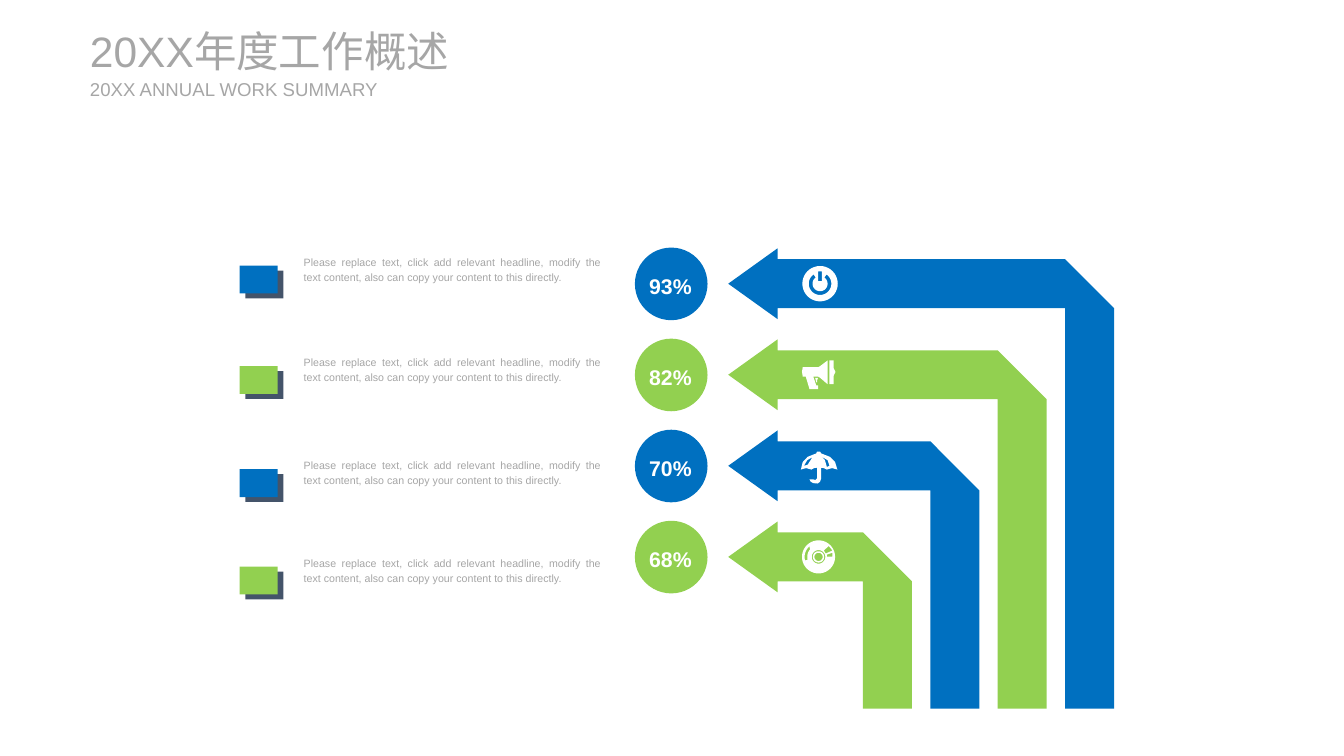
import math
import pptx
import pptx.util
import pptx.dml.color
import pptx.enum.shapes
import pptx.enum.text

Cm = pptx.util.Cm
RGBColor = pptx.dml.color.RGBColor
Shape = pptx.enum.shapes.MSO_SHAPE
Align = pptx.enum.text.PP_ALIGN
Anchor = pptx.enum.text.MSO_ANCHOR

BLUE = RGBColor(0x00, 0x70, 0xC0)
GREEN = RGBColor(0x92, 0xD0, 0x50)
NAVY = RGBColor(0x44, 0x54, 0x6A)
GREY = RGBColor(0xA6, 0xA6, 0xA6)
WHITE = RGBColor(0xFF, 0xFF, 0xFF)

BLURB = ("Please replace text, click add relevant headline, modify the text "
         "content, also can copy your content to this directly.")
ROW_MID, ROW_STEP = 7.54, 2.42
ICON_MID = 21.79


def arc(radius, start, end, shift=0):
    steps = 40
    angles = [math.radians(start + (end - start) * i / steps) for i in range(steps + 1)]
    return [(shift + radius * math.cos(a), radius * math.sin(a)) for a in angles]


def move(paths, dx, dy):
    return [[(x + dx, y + dy) for x, y in path] for path in paths]


POWER = [
    arc(0.47, 0, 360),
    [(-0.05, -0.33), (0.05, -0.33), (0.05, -0.07), (-0.05, -0.07)],
    arc(0.3, -55, 235) + arc(0.2, 235, -55),
]
HORN = [
    [(-0.46, -0.2), (-0.05, -0.2), (0, -0.23), (0.2, -0.38), (0.2, 0.25),
     (0, 0.08), (-0.05, 0.05), (-0.18, 0.05), (-0.1, 0.28), (-0.05, 0.28),
     (-0.05, 0.38), (-0.28, 0.38), (-0.38, 0.05), (-0.46, 0.05), (-0.48, -0.08)],
    [(0.25, -0.38), (0.36, -0.38), (0.36, -0.18), (0.41, -0.08),
     (0.36, 0.03), (0.36, 0.25), (0.25, 0.25)],
    [(-0.05, 0.08), (-0.13, 0.08), (-0.1, 0.2), (-0.08, 0.2), (-0.08, 0.15)],
]
BROLLY = [
    [(-0.51, 0.1), (-0.46, -0.1), (-0.33, -0.24), (-0.1, -0.33), (-0.08, -0.38),
     (0, -0.38), (0.03, -0.33), (0.26, -0.24), (0.4, -0.1), (0.46, 0.1),
     (0.32, 0.06), (0.18, 0.1), (0.1, 0.06), (0.03, 0.05), (0.03, 0.33),
     (0, 0.42), (-0.06, 0.47), (-0.18, 0.46), (-0.25, 0.42), (-0.28, 0.36),
     (-0.18, 0.36), (-0.13, 0.38), (-0.08, 0.33), (-0.08, 0.05),
     (-0.16, 0.06), (-0.23, 0.1), (-0.37, 0.06)],
    [(0.18, 0.03), (0.25, 0), (0.2, -0.15), (0.03, -0.25), (0.13, -0.15)],
    [(-0.43, 0), (-0.33, -0.03), (-0.2, -0.23), (-0.34, -0.15)],
]
DISC = move(
    [arc(radius, 0, 360) for radius in (0.44, 0.18, 0.15, 0.11)]
    + [arc(0.37, 165, 230) + arc(0.3, 220, 165),
       [(0.14, -0.17), (0.19, -0.09), (0.37, -0.17), (0.27, -0.29)],
       [(0.37, -0.11), (0.22, -0.06), (0.22, -0.01), (0.37, -0.01)]],
    -0.04, 0)

ROWS = [
    ("93%", BLUE, POWER, 6.6),
    ("82%", GREEN, HORN, 9.27),
    ("70%", BLUE, BROLLY, 12.01),
    ("68%", GREEN, DISC, 14.6),
]


def paint(shape, color):
    shape.shadow.inherit = False
    shape.fill.solid()
    shape.fill.fore_color.rgb = color
    shape.line.fill.background()


def add_form(slide, kind, box, color):
    paint(slide.shapes.add_shape(kind, *map(Cm, box)), color)


def add_free(slide, paths, color):
    spots = [[(Cm(x), Cm(y)) for x, y in path] for path in paths]
    pen = slide.shapes.build_freeform(*spots[0][0])
    pen.add_line_segments(spots[0][1:])
    for path in spots[1:]:
        pen.move_to(*path[0])
        pen.add_line_segments(path[1:])
    paint(pen.convert_to_shape(), color)


def write(frame, text, size, color, bold=False):
    frame.text = text
    para = frame.paragraphs[0]
    font = para.runs[0].font
    font.name = "Arial"
    font.size = pptx.util.Pt(size)
    font.bold = bold
    font.color.rgb = color
    return para


def add_text(slide, box, text, size, color, bold=False, wrap=True):
    frame = slide.shapes.add_textbox(*map(Cm, box)).text_frame
    frame.word_wrap = wrap
    para = write(frame, text, size, color, bold)
    para.alignment = Align.JUSTIFY
    para.line_spacing = 1.2


def set_head(holder, box, text, size):
    holder.left, holder.top, holder.width, holder.height = map(Cm, box)
    frame = holder.text_frame
    frame.auto_size = pptx.enum.text.MSO_AUTO_SIZE.NONE
    frame.vertical_anchor = Anchor.MIDDLE
    frame.margin_left = frame.margin_right = 0
    frame.margin_top = frame.margin_bottom = 0
    para = write(frame, text, size, GREY)
    para.alignment = Align.LEFT
    para.space_before = 0


def add_arrow(slide, mid, right, color):
    tip, neck, foot = 19.35, 20.66, 18.83
    head, half = 0.94, 0.65
    left = right - 2 * half
    add_free(slide, [[
        (tip, mid), (neck, mid - head), (neck, mid - half), (left, mid - half),
        (right, mid + half), (right, foot), (left, foot), (left, mid + half),
        (neck, mid + half), (neck, mid + head)]], color)


def add_row(slide, index, share, color, icon, top):
    mid = ROW_MID + index * ROW_STEP
    add_form(slide, Shape.OVAL, (16.87, mid - 0.96, 1.93, 1.93), color)
    add_text(slide, (17, mid - 0.53, 1.65, 1.07), share, 16, WHITE, True, False)
    add_arrow(slide, mid, 29.6 - 1.79 * index, color)
    add_free(slide, move(icon, ICON_MID, mid), WHITE)
    add_form(slide, Shape.RECTANGLE, (6.52, top + 0.59, 1.01, 0.74), NAVY)
    add_form(slide, Shape.RECTANGLE, (6.37, top + 0.46, 1.01, 0.74), color)
    add_text(slide, (7.82, top, 8.41, 1.04), BLURB, 8, GREY)


def main():
    deck = pptx.Presentation()
    deck.slide_width, deck.slide_height = Cm(35.71), Cm(20.09)
    slide = deck.slides.add_slide(deck.slide_layouts[2])
    title, body = slide.shapes.title, slide.placeholders[1]
    set_head(title, (2.39, 0.66, 10.97, 1.37), "20XX年度工作概述", 32)
    set_head(body, (2.39, 2.06, 7.8, 0.61), "20XX ANNUAL WORK SUMMARY", 14)
    for index, row in enumerate(ROWS):
        add_row(slide, index, *row)
    deck.save("out.pptx")


if __name__ == "__main__":
    main()
